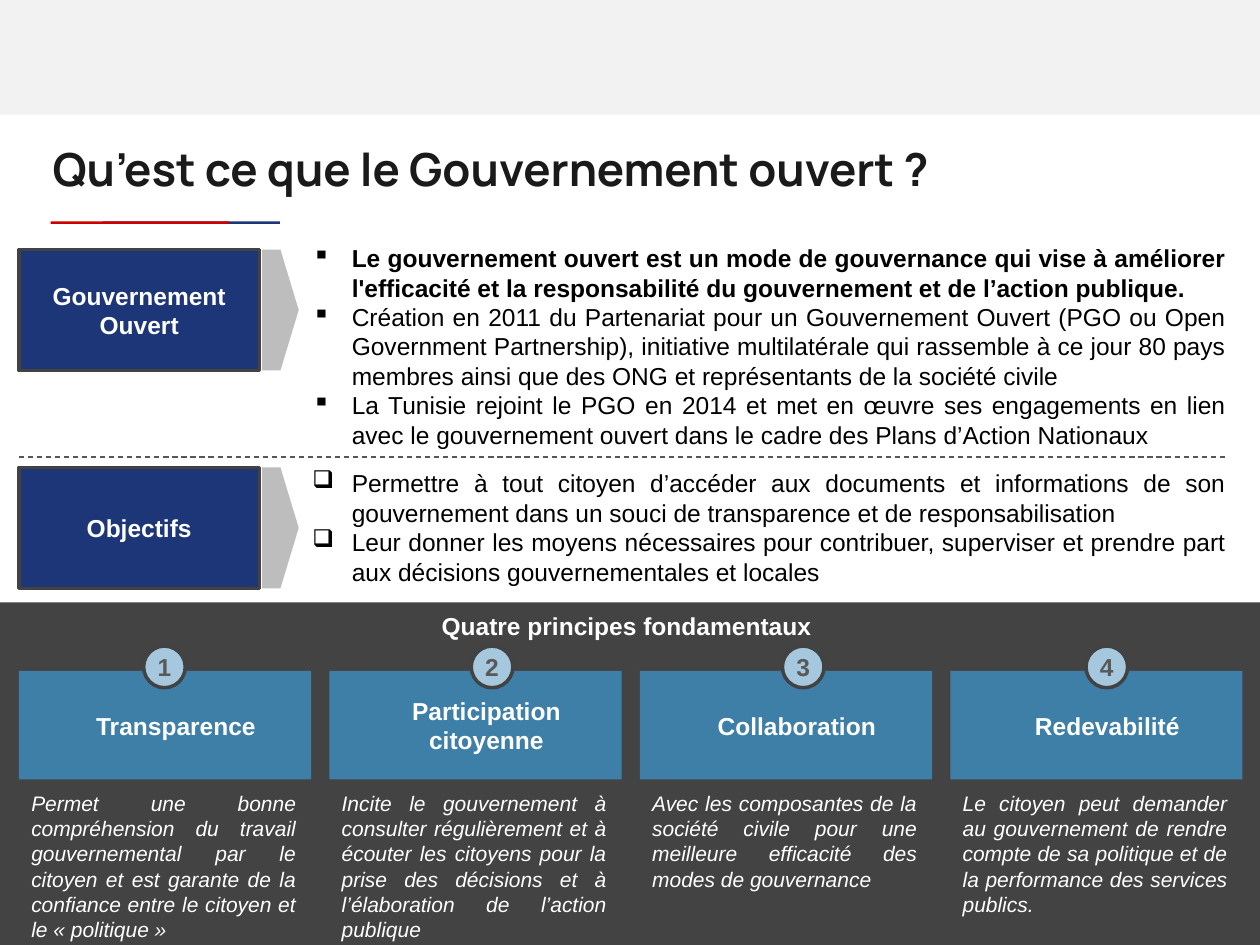
from dataclasses import dataclass

from lxml.etree import SubElement
from pptx import Presentation
from pptx.dml.color import RGBColor
from pptx.enum.dml import MSO_LINE
from pptx.enum.shapes import MSO_CONNECTOR, MSO_SHAPE
from pptx.enum.text import MSO_ANCHOR, PP_ALIGN
from pptx.oxml.ns import qn
from pptx.shapes.autoshape import Shape
from pptx.slide import Slide
from pptx.util import Pt

WHITE = RGBColor(0xFF, 0xFF, 0xFF)
BLACK = RGBColor(0x00, 0x00, 0x00)
INK = RGBColor(0x1A, 0x1A, 0x1A)
NAVY = RGBColor(0x1C, 0x36, 0x78)
RED = RGBColor(0xCC, 0x00, 0x00)
PALE_GREY = RGBColor(0xF2, 0xF2, 0xF2)
ARROW_GREY = RGBColor(0xBD, 0xBD, 0xBD)
DARK_GREY = RGBColor(0x43, 0x43, 0x43)
OUTLINE_GREY = RGBColor(0x42, 0x42, 0x42)
RULE_GREY = RGBColor(0x57, 0x57, 0x57)
NUMBER_GREY = RGBColor(0x59, 0x59, 0x59)
CARD_BLUE = RGBColor(0x3E, 0x7F, 0xA8)
BADGE_BLUE = RGBColor(0xA6, 0xC8, 0xDE)

MARGIN = 10.8
CARD_STEP = 177.4
CARD_TOP = 383.4
CARD_HEIGHT = 62


@dataclass(frozen=True)
class Box:
    """Position and size in points."""

    left: float
    top: float
    width: float
    height: float


@dataclass(frozen=True)
class TextStyle:
    """Character and paragraph formatting."""

    size: float
    color: RGBColor
    bold: bool = False
    italic: bool = False
    align: PP_ALIGN = PP_ALIGN.CENTER
    font: str = "Arial"


@dataclass(frozen=True)
class Section:
    """A labelled block of bullets."""

    label: str
    top: float
    text_box: Box
    bullet: str
    items: tuple[str, ...]
    bold_items: int = 0


@dataclass(frozen=True)
class Principle:
    """A numbered card with its description."""

    name: str
    badge_left: float
    description: str


TITLE_STYLE = TextStyle(26, INK, bold=True, align=PP_ALIGN.LEFT, font="Manrope")
LABEL_STYLE = TextStyle(14, WHITE, bold=True)
NUMBER_STYLE = TextStyle(14, NUMBER_GREY, bold=True)
DESCRIPTION_STYLE = TextStyle(12, WHITE, italic=True, align=PP_ALIGN.JUSTIFY)

SECTIONS = (
    Section("Gouvernement Ouvert", 142.6, Box(171.4, 135.4, 536.4, 126), "▪", (
        "Le gouvernement ouvert est un mode de gouvernance qui vise à améliorer l'efficacité et la responsabilité du gouvernement et de l’action publique. ",
        "Création en 2011 du Partenariat pour un Gouvernement Ouvert (PGO ou Open Government Partnership), initiative multilatérale qui rassemble à ce jour 80 pays membres ainsi que des ONG et représentants de la société civile",
        "La Tunisie rejoint le PGO en 2014 et met en œuvre ses engagements en lien avec le gouvernement ouvert dans le cadre des Plans d’Action Nationaux",
    ), bold_items=1),
    Section("Objectifs", 267.1, Box(171.4, 264.2, 536.4, 75), "❑", (
        "Permettre à tout citoyen d’accéder aux documents et informations de son gouvernement dans un souci de transparence et de responsabilisation",
        "Leur donner les moyens nécessaires pour contribuer, superviser et prendre part aux décisions gouvernementales et locales",
    )),
)
PRINCIPLES = (
    Principle("Transparence", 82.1, "Permet une bonne compréhension du travail gouvernemental par le citoyen et est garante de la confiance entre le citoyen et le « politique »"),
    Principle("Participation citoyenne", 269.3, "Incite le gouvernement à consulter régulièrement et à écouter les citoyens pour la prise des décisions et à l’élaboration de l’action publique "),
    Principle("Collaboration", 447.1, "Avec les composantes de la société civile pour une meilleure efficacité des modes de gouvernance"),
    Principle("Redevabilité", 620.6, "Le citoyen peut demander au gouvernement de rendre compte de sa politique et de la performance des services publics."),
)


def add_block(slide: Slide, kind: MSO_SHAPE, box: Box, fill: RGBColor, outlined: bool = False) -> Shape:
    """Draw a filled preset shape."""
    shape = slide.shapes.add_shape(kind, Pt(box.left), Pt(box.top), Pt(box.width), Pt(box.height))
    shape.shadow.inherit = False
    shape.fill.solid()
    shape.fill.fore_color.rgb = fill
    if outlined:
        shape.line.color.rgb = OUTLINE_GREY
        shape.line.width = Pt(2)
    else:
        shape.line.fill.background()
    return shape


def write(shape: Shape, texts: tuple[str, ...], style: TextStyle, bullet: str = "", bold_items: int = 0) -> None:
    """Fill a shape with one paragraph per text."""
    frame = shape.text_frame
    frame.word_wrap = True
    for index, text in enumerate(texts):
        paragraph = frame.add_paragraph() if index else frame.paragraphs[0]
        paragraph.alignment = style.align
        if bullet:
            properties = paragraph._p.get_or_add_pPr()
            properties.set("marL", str(Pt(22.5)))
            properties.set("indent", str(-Pt(22.5)))
            color = SubElement(SubElement(properties, qn("a:buClr")), qn("a:srgbClr"))
            color.set("val", str(style.color))
            SubElement(properties, qn("a:buChar")).set("char", bullet)
        run = paragraph.add_run()
        run.text = text
        run.font.name = style.font
        run.font.size = Pt(style.size)
        run.font.bold = style.bold or index < bold_items
        run.font.italic = style.italic
        run.font.color.rgb = style.color


def add_text(slide: Slide, box: Box) -> Shape:
    """Add an empty text box."""
    return slide.shapes.add_textbox(Pt(box.left), Pt(box.top), Pt(box.width), Pt(box.height))


def add_title(slide: Slide) -> None:
    """Add the top band, the title and its two-colour underline."""
    add_block(slide, MSO_SHAPE.RECTANGLE, Box(0, 0, 720, 65.5), PALE_GREY)
    add_block(slide, MSO_SHAPE.RECTANGLE, Box(59, 126.5, 101, 1.5), NAVY)
    add_block(slide, MSO_SHAPE.RECTANGLE, Box(29, 126.5, 102, 1.5), RED)
    title = add_text(slide, Box(23, 73.4, 688.3, 56.2))
    frame = title.text_frame
    frame.margin_left = frame.margin_right = frame.margin_top = frame.margin_bottom = Pt(7.2)
    write(title, ("Qu’est ce que le Gouvernement ouvert ?",), TITLE_STYLE)


def add_section(slide: Slide, section: Section) -> None:
    """Add a label, its arrow and its bullets."""
    label = add_block(slide, MSO_SHAPE.RECTANGLE, Box(MARGIN, section.top, 137.5, 69.1), NAVY, outlined=True)
    write(label, (section.label,), LABEL_STYLE)
    add_block(slide, MSO_SHAPE.PENTAGON, Box(149.8, section.top, 20.9, 69.1), ARROW_GREY)
    style = TextStyle(14, BLACK, align=PP_ALIGN.JUSTIFY)
    write(add_text(slide, section.text_box), section.items, style, section.bullet, section.bold_items)


def add_divider(slide: Slide) -> None:
    """Add the dashed rule between the sections."""
    divider = slide.shapes.add_connector(MSO_CONNECTOR.STRAIGHT, Pt(MARGIN), Pt(261.2), Pt(700.6), Pt(261.2))
    divider.line.color.rgb = RULE_GREY
    divider.line.width = Pt(0.75)
    divider.line.dash_style = MSO_LINE.DASH
    SubElement(divider._element.spPr, qn("a:effectLst"))


def add_principle(slide: Slide, index: int, principle: Principle) -> None:
    """Add a card with its name, number and description."""
    left = MARGIN + index * CARD_STEP
    add_block(slide, MSO_SHAPE.RECTANGLE, Box(left, CARD_TOP, 167, CARD_HEIGHT), CARD_BLUE)
    name = add_text(slide, Box(left + 21, CARD_TOP, 137.5, CARD_HEIGHT))
    name.text_frame.vertical_anchor = MSO_ANCHOR.MIDDLE
    write(name, (principle.name,), LABEL_STYLE)
    write(add_text(slide, Box(left, 448.2, 165.6, 94.3)), (principle.description,), DESCRIPTION_STYLE)
    badge = add_block(slide, MSO_SHAPE.OVAL, Box(principle.badge_left, 369.2, 23.8, 23.8), BADGE_BLUE, outlined=True)
    frame = badge.text_frame
    frame.margin_left = frame.margin_right = frame.margin_top = frame.margin_bottom = Pt(0)
    write(badge, (str(index + 1),), NUMBER_STYLE)


def main() -> None:
    """Build and save the presentation."""
    presentation = Presentation()
    presentation.slide_width, presentation.slide_height = Pt(720), Pt(540)
    slide = presentation.slides.add_slide(presentation.slide_layouts[6])
    add_title(slide)
    for section in SECTIONS:
        add_section(slide, section)
    add_divider(slide)
    add_block(slide, MSO_SHAPE.RECTANGLE, Box(0, 344.2, 720, 195.8), DARK_GREY)
    write(add_text(slide, Box(236.9, 345.6, 246.2, 24.5)), ("Quatre principes fondamentaux ",), LABEL_STYLE)
    for index, principle in enumerate(PRINCIPLES):
        add_principle(slide, index, principle)
    presentation.save("out.pptx")


if __name__ == "__main__":
    main()
